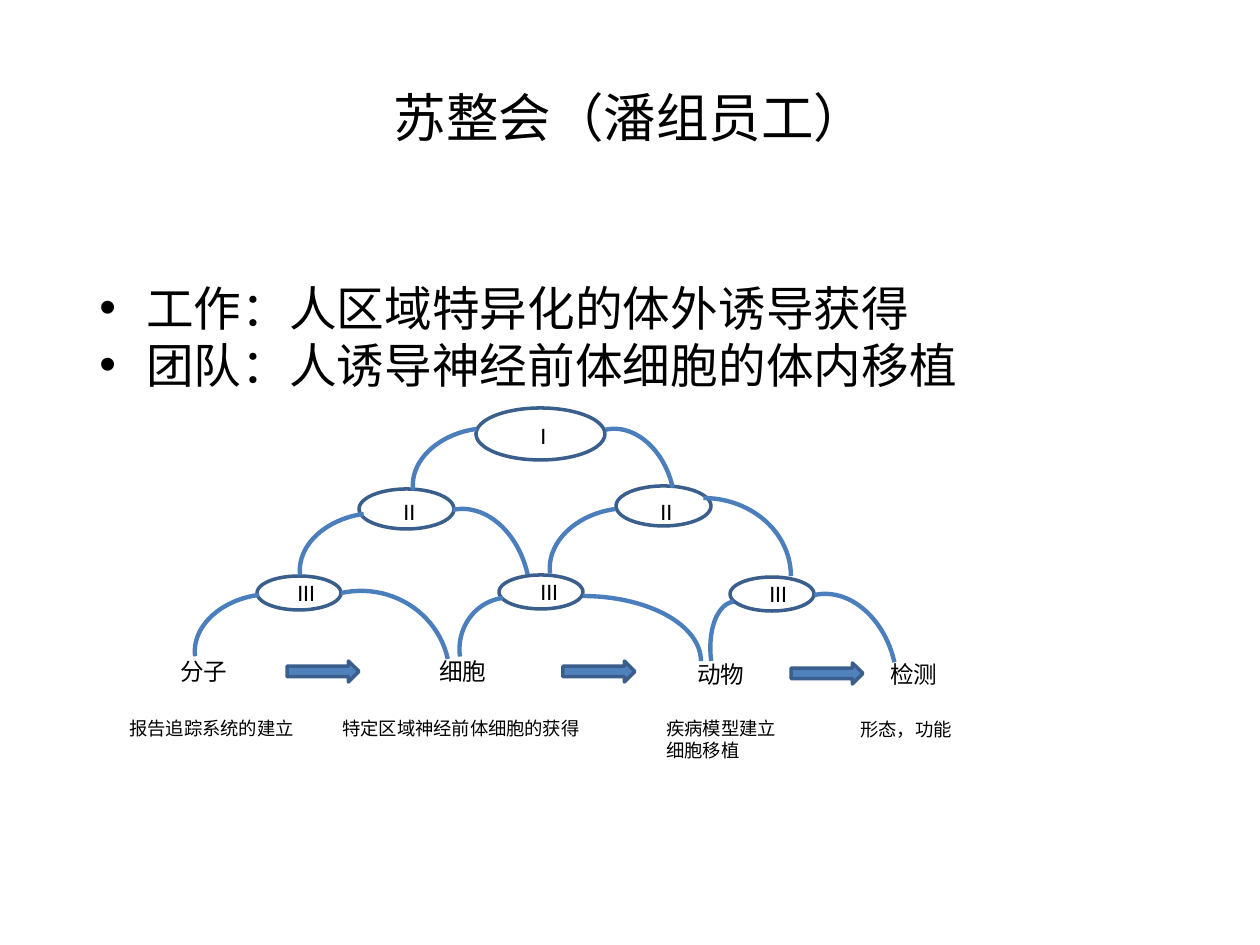
"""Build the team structure slide with its three-level tree and work stages."""
from pptx import Presentation
from pptx.dml.color import RGBColor
from pptx.enum.shapes import MSO_SHAPE
from pptx.enum.text import MSO_ANCHOR, PP_ALIGN
from pptx.oxml.ns import qn
from pptx.util import Emu, Pt

OVAL, ARC, ARROW = MSO_SHAPE.OVAL, MSO_SHAPE.ARC, MSO_SHAPE.RIGHT_ARROW
CENTER, MIDDLE = PP_ALIGN.CENTER, MSO_ANCHOR.MIDDLE
SCALE = 914400 / 126
THEME = {
    "text": "000000", "arrow": "4F81BD", "outline": "3A5F8C", "branch": "4B7EBC",
    "latin": "Calibri", "cjk": "Noto Sans CJK SC",
    "title": 30, "body": 27.2, "label": 13.5, "note": 10.5,
}

TITLE = "苏整会（潘组员工）"
BULLETS = ["工作：人区域特异化的体外诱导获得", "团队：人诱导神经前体细胞的体内移植"]
STAGES = [("分子", 168, 651), ("细胞", 427, 651), ("动物", 685, 654), ("检测", 878, 654)]
NOTES = [
    ("报告追踪系统的建立", 117, 711, 193, 35),
    ("特定区域神经前体细胞的获得", 330, 711, 267, 35),
    ("疾病模型建立\n细胞移植", 654, 711, 137, 57),
    ("形态，功能", 848, 712, 118, 35),
]
ARROWS = [(287, 661), (563, 661), (791, 663)]
LEVELS = [
    {"name": "I", "oval": (129, 52), "label": (32, 42), "wrap": False,
     "nodes": [(476, 408, 528, 415)]},
    {"name": "II", "oval": (95, 40), "label": (38, 42), "wrap": False,
     "nodes": [(359, 489, 391, 491), (616, 486, 648, 491)]},
    {"name": "III", "oval": (84, 34), "label": (53, 42), "wrap": True,
     "nodes": [(257, 576, 285, 572), (499, 575, 528, 571), (730, 577, 757, 573)]},
]
BRANCHES = {
    262.5: [(431, 410, 105, 142), (318, 495, 105, 142), (567, 491, 111, 146),
            (213, 576, 105, 142), (457, 600, 105, 100), (685, 627, 112, 60)],
    347.5: [(568, 428, 106, 142), (411, 508, 118, 158),
            (270, 591, 180, 175), (769, 593, 127, 166)],
    0: [(616, 498, 175, 156), (465, 596, 236, 130)],
}


def px(*lengths):
    return [Emu(round(n * SCALE)) for n in lengths]


def color(name):
    return RGBColor.from_string(THEME[name])


def style(tf, size, font):
    for p in tf.paragraphs:
        for r in p.runs:
            r.font.size = Pt(THEME[size])
            r.font.name = THEME[font]
            r.font.color.rgb = color("text")
            if font == "cjk":
                ea = r._r.get_or_add_rPr().makeelement(qn("a:ea"), {"typeface": THEME[font]})
                r.font._element.find(qn("a:latin")).addnext(ea)


def add_text(slide, text, box, size, font="latin", wrap=False):
    tf = slide.shapes.add_textbox(*px(*box)).text_frame
    tf.word_wrap = wrap
    tf.text = text
    style(tf, size, font)
    return tf


def add_shape(slide, kind, box, line, width, fill=None, rotation=0):
    sp = slide.shapes.add_shape(kind, *px(*box))
    sp.shadow.inherit = False
    sp.rotation = rotation
    sp.line.color.rgb = color(line)
    sp.line.width = Pt(width)
    if fill:
        sp.fill.solid()
        sp.fill.fore_color.rgb = color(fill)
    else:
        sp.fill.background()


def add_title(slide):
    title = slide.shapes.title
    title.left, title.top, title.width, title.height = px(63, 38, 1134, 158)
    tf = title.text_frame
    tf.text = TITLE
    tf.vertical_anchor = MIDDLE
    tf.paragraphs[0].alignment = CENTER
    style(tf, "title", "cjk")


def add_bullets(slide):
    tf = add_text(slide, "\n".join(BULLETS), (87, 283, 1086, 121), "body", "cjk", True)
    indent = px(47)[0]
    for p in tf.paragraphs:
        p.space_before = Pt(5.4)
        p.line_spacing = 0.82
        pPr = p._p.get_or_add_pPr()
        pPr.set("marL", str(indent))
        pPr.set("indent", str(-indent))
        for tag, attrs in (("a:buFont", {"typeface": "Arial"}), ("a:buChar", {"char": "•"})):
            pPr.append(pPr.makeelement(qn(tag), attrs))


def main():
    prs = Presentation()
    prs.slide_width, prs.slide_height = px(1260, 945)
    slide = prs.slides.add_slide(prs.slide_layouts[5])
    add_title(slide)
    add_bullets(slide)
    for name, x, y in STAGES:
        add_text(slide, name, (x, y, 73, 42), "label")
    for note, *box in NOTES:
        add_text(slide, note, box, "note")
    for x, y in ARROWS:
        add_shape(slide, ARROW, (x, y, 72, 21), "outline", 2, "arrow")
    for level in LEVELS:
        for x, y, label_x, label_y in level["nodes"]:
            add_shape(slide, OVAL, (x, y, *level["oval"]), "outline", 2)
            add_text(slide, level["name"], (label_x, label_y, *level["label"]),
                     "label", wrap=level["wrap"])
    for rotation, boxes in BRANCHES.items():
        for box in boxes:
            add_shape(slide, ARC, box, "branch", 2.5, rotation=rotation)
    prs.save("out.pptx")


if __name__ == "__main__":
    main()
